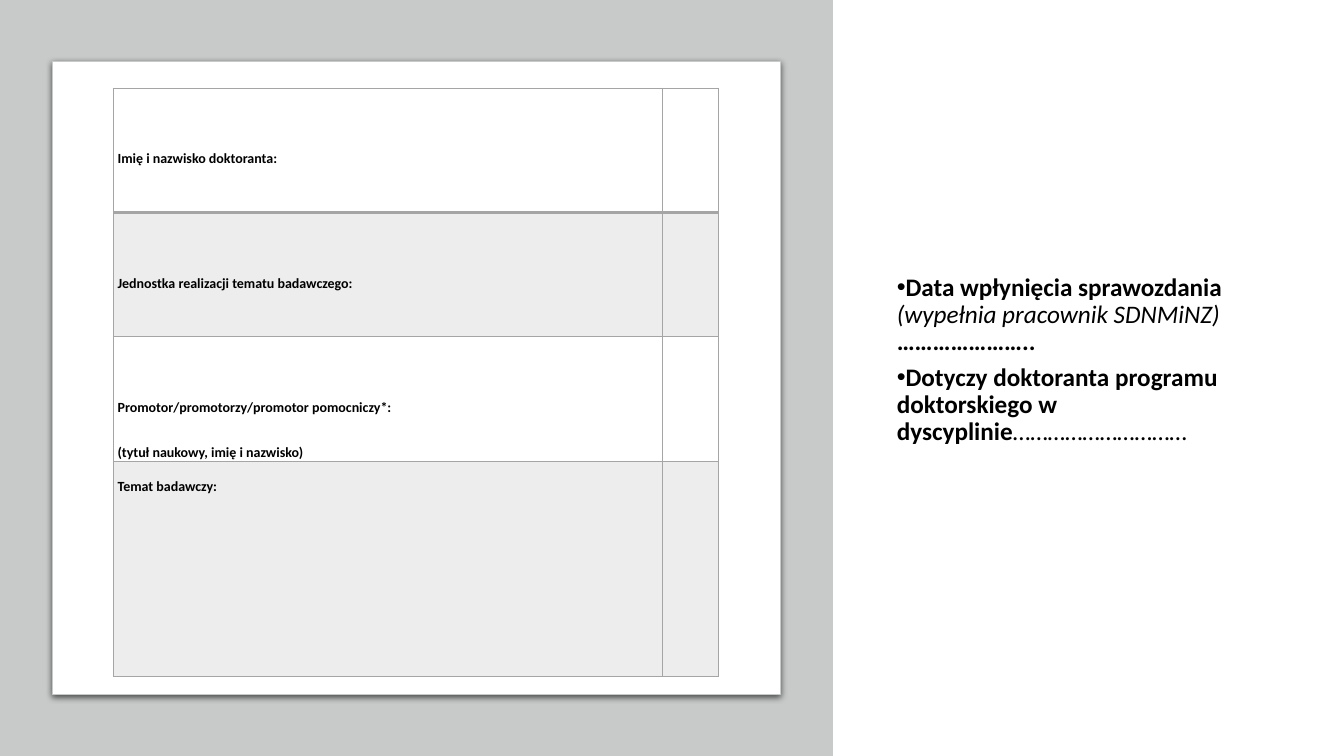
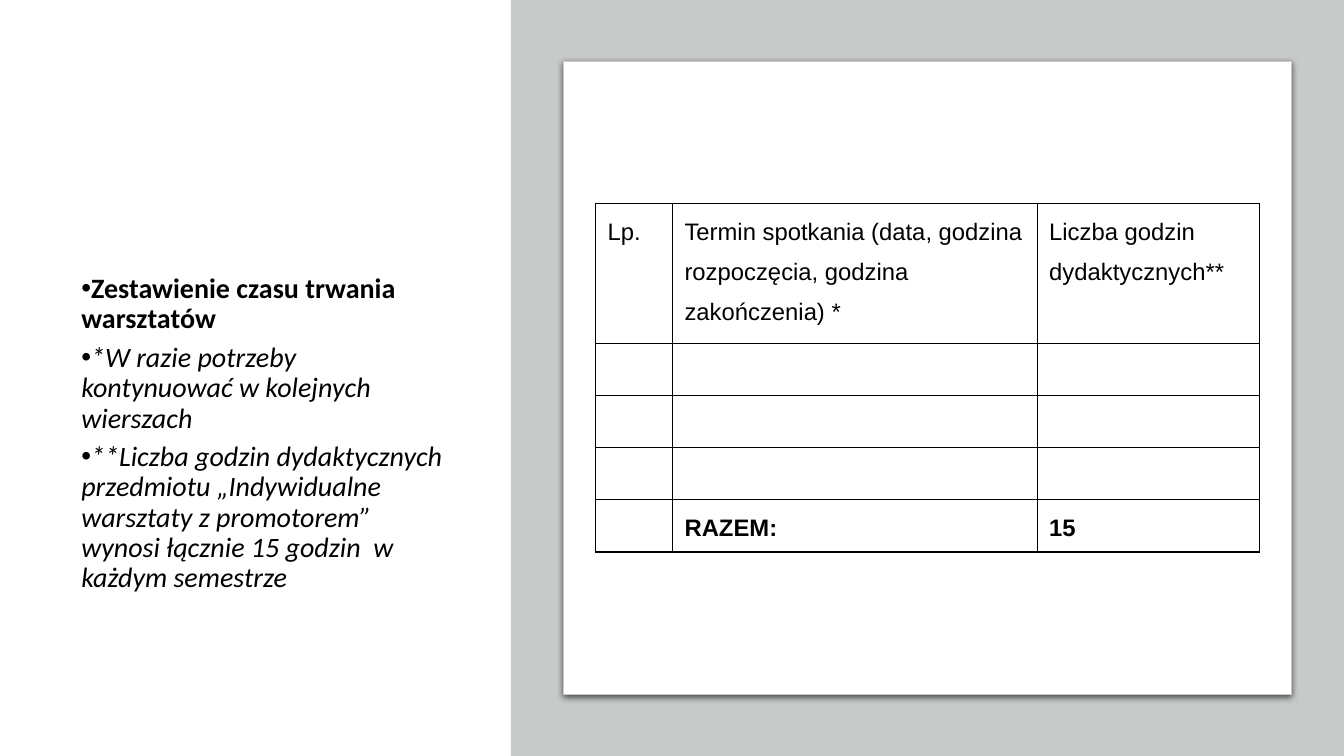
from dataclasses import dataclass

from lxml.etree import SubElement
from pptx import Presentation
from pptx.dml.color import RGBColor
from pptx.enum.shapes import MSO_SHAPE as Preset
from pptx.enum.text import MSO_ANCHOR as Anchor
from pptx.oxml.ns import qn
from pptx.util import Pt


@dataclass(frozen=True)
class Theme:
    ink: str = "000000"
    paper: str = "FFFFFF"
    panel: str = "C8CACA"
    rule: str = "A5A5A5"
    stripe: str = "EDEDED"
    body_font: str = "Calibri"
    grid_font: str = "Arial"
    form_size: float = 10
    grid_size: float = 17
    note_size: float = 18
    long_note_size: float = 20


THEME = Theme()
PAGE_WIDTH, PAGE_HEIGHT = 960, 540
PANEL_WIDTH, CARD_INSET_X, CARD_INSET_Y = 595, 37.5, 44

BOLD = {"bold": True}
ITALIC = {"italic": True}
PLAIN = {}

NOTE_PARA = {"line_spacing": 0.9, "space_after": Pt(6)}
FORM_PARA = {"line_spacing": 2.0, "space_after": Pt(8)}
GRID_PARA = {"line_spacing": 1.5, "space_before": Pt(6), "space_after": Pt(6)}


def apply(target, values):
    for name, value in values.items():
        setattr(target, name, value)


def paint(fill, color):
    fill.solid()
    fill.fore_color.rgb = RGBColor.from_string(color)


def add_node(parent, tag, **attributes):
    node = SubElement(parent, qn(tag))
    for name, value in attributes.items():
        node.set(name, str(value))
    return node


def add_span(para, text, font, size, style):
    span = para.add_run()
    span.text = text
    apply(span.font, {"name": font, "size": Pt(size), **style})
    span.font.color.rgb = RGBColor.from_string(THEME.ink)


def add_block(page, left, top, width, height, color):
    block = page.shapes.add_shape(Preset.RECTANGLE, Pt(left), Pt(top), Pt(width), Pt(height))
    block.shadow.inherit = False
    paint(block.fill, color)
    block.line.fill.background()
    return block


def add_panel(page, left):
    add_block(page, left, 0, PANEL_WIDTH, PAGE_HEIGHT, THEME.panel)
    card = add_block(page, left + CARD_INSET_X, CARD_INSET_Y,
                     PANEL_WIDTH - 2 * CARD_INSET_X, PAGE_HEIGHT - 2 * CARD_INSET_Y, THEME.paper)
    paint(card.line.fill, THEME.panel)
    card.line.width = Pt(0.75)
    effects = card.element.spPr.find(qn("a:effectLst"))
    shadow = add_node(effects, "a:outerShdw", blurRad=Pt(4.5), dist=Pt(1.5),
                      dir=90 * 60000, algn="ctr", rotWithShape=0)
    color = add_node(shadow, "a:srgbClr", val=THEME.ink)
    add_node(color, "a:alpha", val=63000)


def add_notes(page, left, width, size, notes):
    box = page.shapes.add_textbox(Pt(left), Pt(192.5), Pt(width), Pt(298))
    frame = box.text_frame
    frame.word_wrap = True
    for index, spans in enumerate(notes):
        para = frame.add_paragraph() if index else frame.paragraphs[0]
        apply(para, NOTE_PARA)
        props = para._p.get_or_add_pPr()
        props.set("marL", "0")
        props.set("indent", str(-Pt(18)))
        add_node(props, "a:buFont", typeface="Arial")
        add_node(props, "a:buChar", char="•")
        for text, style in spans:
            add_span(para, text, THEME.body_font, size, style)


def add_grid(page, left, top, columns, rows):
    frame = page.shapes.add_table(len(rows), len(columns), Pt(left), Pt(top),
                                  Pt(sum(columns)), Pt(sum(rows)))
    table = frame.table
    apply(table, {"first_row": False, "horz_banding": False})
    for column, width in zip(table.columns, columns):
        column.width = Pt(width)
    for row, height in zip(table.rows, rows):
        row.height = Pt(height)
    return table


def style_cell(cell, border, fill, bottom=1):
    props = cell._tc.get_or_add_tcPr()
    for side, width in (("L", 1), ("R", 1), ("T", 1), ("B", bottom)):
        line = add_node(props, f"a:ln{side}", w=Pt(width))
        add_node(add_node(line, "a:solidFill"), "a:srgbClr", val=border)
    paint(cell.fill, fill)


def fill_cell(cell, lines, font, size, style, para_format, side, top):
    apply(cell, {"margin_left": Pt(side), "margin_right": Pt(side), "margin_top": Pt(top),
                 "margin_bottom": 0, "vertical_anchor": Anchor.TOP})
    for index, text in enumerate(lines):
        frame = cell.text_frame
        para = frame.add_paragraph() if index else frame.paragraphs[0]
        apply(para, para_format)
        add_span(para, text, font, size, style)


def add_form(page):
    labels = [
        ["Imię i nazwisko doktoranta:"],
        ["Jednostka realizacji tematu badawczego:"],
        ["Promotor/promotorzy/promotor pomocniczy*:", "(tytuł naukowy, imię i nazwisko)"],
        ["Temat badawczy:"],
    ]
    table = add_grid(page, 81, 63, [392, 40], [88.8] * 3 + [153.6])
    last = len(labels) - 1
    for index, lines in enumerate(labels):
        for cell in table.rows[index].cells:
            style_cell(cell, THEME.rule, THEME.stripe if index % 2 else THEME.paper,
                       bottom=1 if index else 2)
        fill_cell(table.cell(index, 0), lines, THEME.body_font, THEME.form_size, BOLD,
                  FORM_PARA, side=3, top=0 if index == last else 32.4)


def add_schedule(page):
    header = ["Lp.", "Termin spotkania (data, godzina rozpoczęcia, godzina zakończenia) *",
              "Liczba godzin dydaktycznych**"]
    content = [header] + [[""] * 3] * 3 + [["", "RAZEM:", "15"]]
    table = add_grid(page, 425.5, 145.5, [55, 260.5, 158.5], [100] + [37.2] * 4)
    for index, texts in enumerate(content):
        for cell, text in zip(table.rows[index].cells, texts):
            style_cell(cell, THEME.ink, THEME.paper)
            if text:
                fill_cell(cell, [text], THEME.grid_font, THEME.grid_size,
                          BOLD if index else PLAIN, GRID_PARA, side=8.5, top=1.5)


def add_report_page(deck):
    page = deck.slides.add_slide(deck.slide_layouts[6])
    add_panel(page, 0)
    add_notes(page, 633.5, 289, THEME.note_size, [
        [("Data wpłynięcia sprawozdania ", BOLD), ("(wypełnia pracownik SDNMiNZ)", ITALIC),
         (" …………………..", BOLD)],
        [("Dotyczy doktoranta programu doktorskiego w dyscyplinie", BOLD),
         ("…………………………", PLAIN)],
    ])
    add_form(page)


def add_workshop_page(deck):
    page = deck.slides.add_slide(deck.slide_layouts[6])
    add_notes(page, 51, 276, THEME.long_note_size, [
        [("Zestawienie czasu trwania warsztatów", BOLD)],
        [("*W razie potrzeby kontynuować w kolejnych wierszach", ITALIC)],
        [("**Liczba godzin dydaktycznych przedmiotu „Indywidualne warsztaty z promotorem” "
          "wynosi łącznie 15 godzin  w każdym semestrze", ITALIC)],
    ])
    add_panel(page, PAGE_WIDTH - PANEL_WIDTH)
    add_schedule(page)


def main():
    deck = Presentation()
    apply(deck, {"slide_width": Pt(PAGE_WIDTH), "slide_height": Pt(PAGE_HEIGHT)})
    add_report_page(deck)
    add_workshop_page(deck)
    deck.save("out.pptx")


if __name__ == "__main__":
    main()
